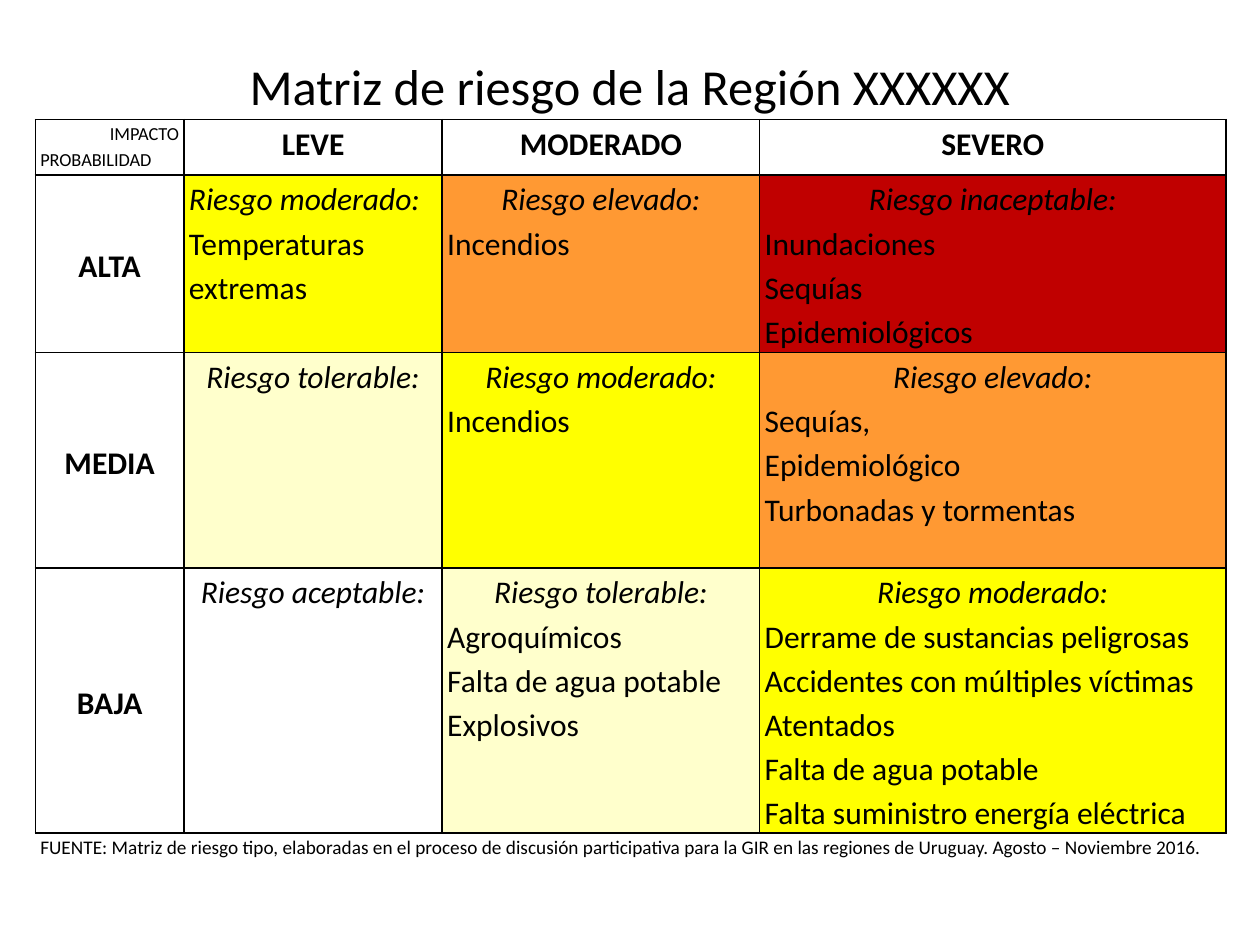
from dataclasses import dataclass

from lxml import etree
from pptx import Presentation
from pptx.dml.color import RGBColor
from pptx.enum.text import MSO_ANCHOR, PP_ALIGN
from pptx.oxml.ns import qn
from pptx.util import Inches, Pt

LEFT, CENTER, RIGHT = PP_ALIGN.LEFT, PP_ALIGN.CENTER, PP_ALIGN.RIGHT
TOP, MIDDLE = MSO_ANCHOR.TOP, MSO_ANCHOR.MIDDLE


@dataclass(frozen=True)
class Theme:
    font: str = "Calibri"
    ink: str = "000000"
    tolerable: str = "FFFFCC"
    moderate: str = "FFFF00"
    high: str = "FF9933"
    unacceptable: str = "C00000"
    title_size: float = 28.8
    body_size: float = 18
    source_size: float = 11
    axis_size: float = 10.5
    line_spacing: float = 1.15
    border_width: float = 1
    cell_inset: float = 0.04


THEME = Theme()
RISK_FILLS = {
    "Riesgo aceptable:": None,
    "Riesgo tolerable:": THEME.tolerable,
    "Riesgo moderado:": THEME.moderate,
    "Riesgo elevado:": THEME.high,
    "Riesgo inaceptable:": THEME.unacceptable,
}
COLUMN_WIDTHS = [1.18, 2.05, 2.52, 3.7]
ROW_HEIGHTS = [0.66, 0.44, 1.41, 1.71, 2.1, 0.86]
IMPACTS = ["LEVE", "MODERADO", "SEVERO"]
MATRIX = {
    "ALTA": [
        ("Riesgo moderado:", ["Temperaturas extremas"]),
        ("Riesgo elevado:", ["Incendios"]),
        ("Riesgo inaceptable:", ["Inundaciones", "Sequías", "Epidemiológicos"]),
    ],
    "MEDIA": [
        ("Riesgo tolerable:", []),
        ("Riesgo moderado:", ["Incendios"]),
        ("Riesgo elevado:", ["Sequías,", "Epidemiológico", "Turbonadas y tormentas"]),
    ],
    "BAJA": [
        ("Riesgo aceptable:", []),
        ("Riesgo tolerable:", ["Agroquímicos", "Falta de agua potable", "Explosivos"]),
        ("Riesgo moderado:", [
            "Derrame de sustancias peligrosas", "Accidentes con múltiples víctimas",
            "Atentados", "Falta de agua potable", "Falta suministro energía eléctrica"]),
    ],
}
SOURCE = ("FUENTE: Matriz de riesgo tipo, elaboradas en el proceso de discusión participativa "
          "para la GIR en las regiones de Uruguay. Agosto – Noviembre 2016.")


class SlideBuilder:
    def __init__(self, slide, theme):
        self.slide = slide
        self.theme = theme

    def add_lines(self, frame, lines):
        """Fill a text frame from (text, alignment, font values) triples."""
        for index, (text, alignment, values) in enumerate(lines):
            paragraph = frame.paragraphs[0] if index == 0 else frame.add_paragraph()
            paragraph.alignment = alignment
            paragraph.line_spacing = self.theme.line_spacing
            run = paragraph.add_run()
            run.text = text
            font_values = {"name": self.theme.font, "size": Pt(self.theme.body_size),
                           "bold": False, "italic": False, **values}
            for name, value in font_values.items():
                setattr(run.font, name, value)
            run.font.color.rgb = RGBColor.from_string(self.theme.ink)

    def title(self, text, left, top, width, height):
        frame = self.slide.shapes.add_textbox(
            Inches(left), Inches(top), Inches(width), Inches(height)).text_frame
        frame.word_wrap = True
        frame.vertical_anchor = MIDDLE
        self.add_lines(frame, [(text, CENTER, {"size": Pt(self.theme.title_size)})])

    def table(self, left, top, widths, heights):
        table = self.slide.shapes.add_table(
            len(heights), len(widths), Inches(left), Inches(top),
            Inches(sum(widths)), Inches(sum(heights))).table
        table.first_row = table.horz_banding = False
        for column, width in zip(table.columns, widths):
            column.width = Inches(width)
        for row, height in zip(table.rows, heights):
            row.height = Inches(height)
        return table

    def borders(self, cell, visible_sides):
        properties = cell._tc.get_or_add_tcPr()
        for side in "LRTB":
            line = etree.SubElement(properties, qn(f"a:ln{side}"))
            if side in visible_sides:
                line.set("w", str(Pt(self.theme.border_width)))
                fill = etree.SubElement(line, qn("a:solidFill"))
                etree.SubElement(fill, qn("a:srgbClr")).set("val", self.theme.ink)
            else:
                etree.SubElement(line, qn("a:noFill"))

    def cell(self, cell, lines=(), fill=None, anchor=TOP, sides="LRTB"):
        self.borders(cell, sides)
        if fill:
            cell.fill.solid()
            cell.fill.fore_color.rgb = RGBColor.from_string(fill)
        else:
            cell.fill.background()
        inset = Inches(self.theme.cell_inset)
        layout = {"margin_left": inset, "margin_right": inset, "margin_top": 0,
                  "margin_bottom": 0, "vertical_anchor": anchor}
        for name, value in layout.items():
            setattr(cell, name, value)
        self.add_lines(cell.text_frame, lines)

    def full_row(self, table, row, side, lines=()):
        """Merge a whole row, bordered only on the side that meets the matrix."""
        last = len(table.columns) - 1
        table.cell(row, 0).merge(table.cell(row, last))
        self.cell(table.cell(row, 0), lines, sides=side)
        for column in range(1, last + 1):
            self.cell(table.cell(row, column), sides=side)


def main():
    presentation = Presentation()
    presentation.slide_width, presentation.slide_height = Inches(10), Inches(7.5)
    builder = SlideBuilder(presentation.slides.add_slide(presentation.slide_layouts[6]), THEME)
    builder.title("Matriz de riesgo de la Región XXXXXX", 0.5, 0.05, 9, 1.18)
    table = builder.table(0.28, 0.29, COLUMN_WIDTHS, ROW_HEIGHTS)

    builder.full_row(table, 0, "B")
    axis = {"size": Pt(THEME.axis_size)}
    bold = {"bold": True}
    builder.cell(table.cell(1, 0), [("IMPACTO", RIGHT, axis), ("PROBABILIDAD", LEFT, axis)])
    for column, impact in enumerate(IMPACTS, 1):
        builder.cell(table.cell(1, column), [(impact, CENTER, bold)])

    for row, (probability, risks) in enumerate(MATRIX.items(), 2):
        builder.cell(table.cell(row, 0), [(probability, CENTER, bold)], anchor=MIDDLE)
        for column, (level, threats) in enumerate(risks, 1):
            alignment = LEFT if (row, column) == (2, 1) else CENTER
            lines = [(level, alignment, {"italic": True})]
            lines += [(threat, LEFT, {}) for threat in threats]
            builder.cell(table.cell(row, column), lines, RISK_FILLS[level])

    builder.full_row(table, len(ROW_HEIGHTS) - 1, "T",
                     [(SOURCE, LEFT, {"size": Pt(THEME.source_size)})])
    presentation.save("out.pptx")


if __name__ == "__main__":
    main()
